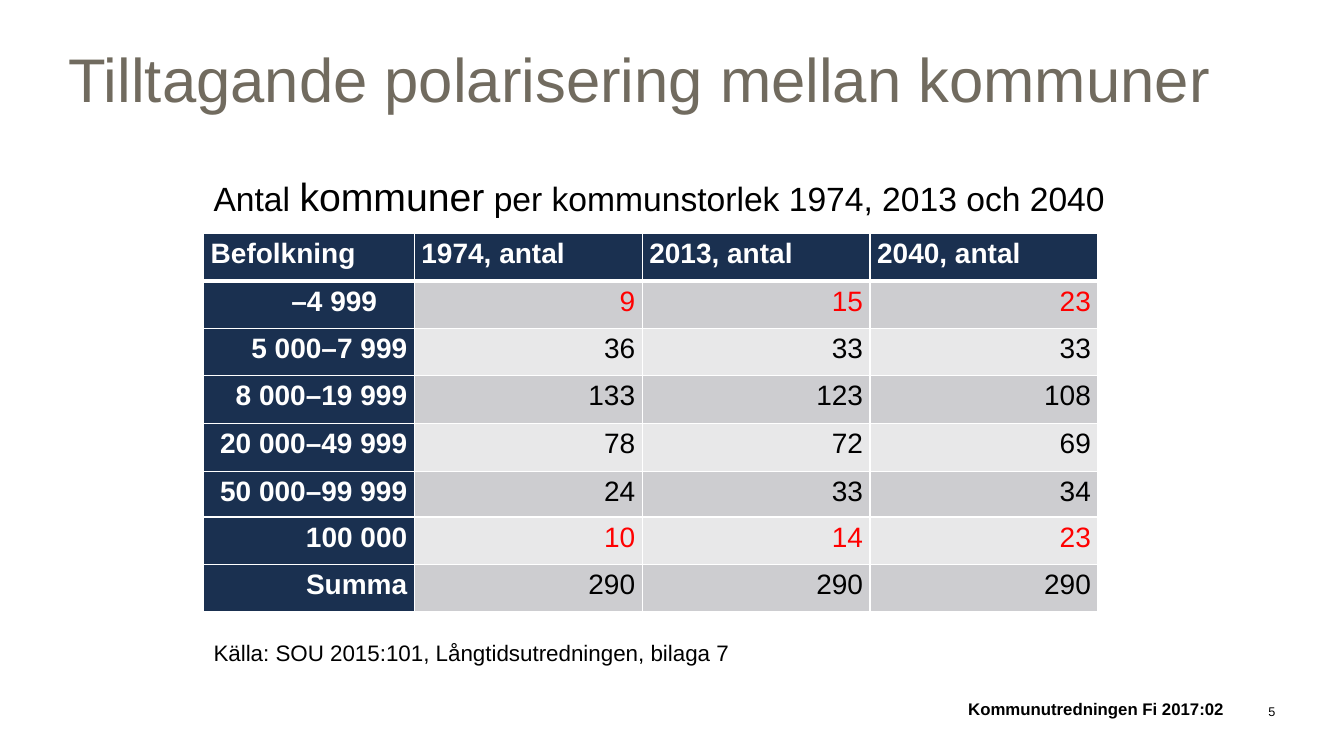
from lxml import etree
from pptx import Presentation
from pptx import util as u
from pptx.dml import color
from pptx.enum import text
from pptx.oxml import ns

COLORS = {
    "title": "716B5F",
    "text": "000000",
    "navy": "1A3050",
    "white": "FFFFFF",
    "highlight": "FF0000",
    "dark_band": "CDCDD0",
    "light_band": "E8E8E9",
}
ALIGN = text.PP_ALIGN
ANCHOR = text.MSO_ANCHOR


def write_runs(paragraph, runs, ink="text", bold=False, align=ALIGN.LEFT):
    paragraph.alignment = align
    for content, size in runs:
        run = paragraph.add_run()
        run.text = content
        run.font.name = "Arial"
        run.font.size = u.Pt(size)
        run.font.bold = bold
        run.font.color.rgb = color.RGBColor.from_string(COLORS[ink])


def add_text(box, runs, inset=(0.1, 0.05), anchor=ANCHOR.TOP, wrap=True, **style):
    shape = slide.shapes.add_textbox(*[u.Inches(length) for length in box])
    frame = shape.text_frame
    frame.word_wrap = wrap
    frame.vertical_anchor = anchor
    frame.margin_left = frame.margin_right = u.Inches(inset[0])
    frame.margin_top = frame.margin_bottom = u.Inches(inset[1])
    write_runs(frame.paragraphs[0], runs, **style)
    return shape


presentation = Presentation()
presentation.slide_width = u.Inches(13.33)
presentation.slide_height = u.Inches(7.5)
slide = presentation.slides.add_slide(presentation.slide_layouts[6])

add_text((0.68, 0.36, 12.39, 1.06), [("Tilltagande polarisering mellan kommuner", 44)],
         inset=(0, 0.05), ink="title")
add_text((8.36, 6.89, 3.78, 0.24), [("Kommunutredningen Fi 2017:02", 12)],
         inset=(0, 0), anchor=ANCHOR.BOTTOM, bold=True, align=ALIGN.RIGHT)
add_text((12.12, 6.89, 0.53, 0.24), [("5", 9)],
         inset=(0, 0), anchor=ANCHOR.BOTTOM, align=ALIGN.RIGHT)

population_rows = [
    ("Befolkning", "1974, antal", "2013, antal", "2040, antal"),
    ("–4 999", "9", "15", "23"),
    ("5 000–7 999", "36", "33", "33"),
    ("8 000–19 999", "133", "123", "108"),
    ("20 000–49 999", "78", "72", "69"),
    ("50 000–99 999", "24", "33", "34"),
    ("100 000", "10", "14", "23"),
    ("Summa", "290", "290", "290"),
]
column_widths = [2.09, 2.26, 2.26, 2.26]
row_heights = [0.47, 0.47, 0.47, 0.47, 0.48, 0.45, 0.47, 0.47]
highlighted_rows = (1, 6)

table = slide.shapes.add_table(
    len(population_rows), len(column_widths),
    u.Inches(2.02), u.Inches(2.32), u.Inches(8.87), u.Inches(3.74)).table
for column, width in zip(table.columns, column_widths):
    column.width = u.Inches(width)
for row, height in zip(table.rows, row_heights):
    row.height = u.Inches(height)

for row_index, values in enumerate(population_rows):
    for column_index, value in enumerate(values):
        cell = table.cell(row_index, column_index)
        cell.margin_left = cell.margin_right = u.Inches(0.07)
        cell.margin_top = cell.margin_bottom = 0
        is_heading = row_index == 0 or column_index == 0

        properties = cell._tc.get_or_add_tcPr()
        for side in "LRTB":
            thick = (row_index, side) in ((0, "B"), (1, "T"))
            border = etree.SubElement(properties, ns.qn(f"a:ln{side}"), w=str(u.Pt(3 if thick else 1)))
            border_fill = etree.SubElement(border, ns.qn("a:solidFill"))
            etree.SubElement(border_fill, ns.qn("a:srgbClr"), val=COLORS["white"])

        band = "dark_band" if row_index % 2 else "light_band"
        cell.fill.solid()
        cell.fill.fore_color.rgb = color.RGBColor.from_string(COLORS["navy" if is_heading else band])

        paragraph = cell.text_frame.paragraphs[0]
        paragraph.line_spacing = 1.15
        align = ALIGN.LEFT if row_index == 0 else ALIGN.RIGHT
        if (row_index, column_index) == (1, 0):
            align = ALIGN.CENTER
            paragraph._p.get_or_add_pPr().set("marL", str(u.Inches(0.5)))
        ink = "white" if is_heading else "highlight" if row_index in highlighted_rows else "text"
        write_runs(paragraph, [(value, 20)], ink=ink, bold=is_heading, align=align)

add_text((2.02, 1.66, 9.14, 0.57),
         [("Antal ", 24), ("kommuner", 28), (" per kommunstorlek 1974, 2013 och 2040", 24)],
         wrap=False)
add_text((2.02, 6.29, 5.37, 0.37),
         [("Källa: SOU 2015:101, Långtidsutredningen, bilaga 7", 16)], wrap=False)

presentation.save("out.pptx")
